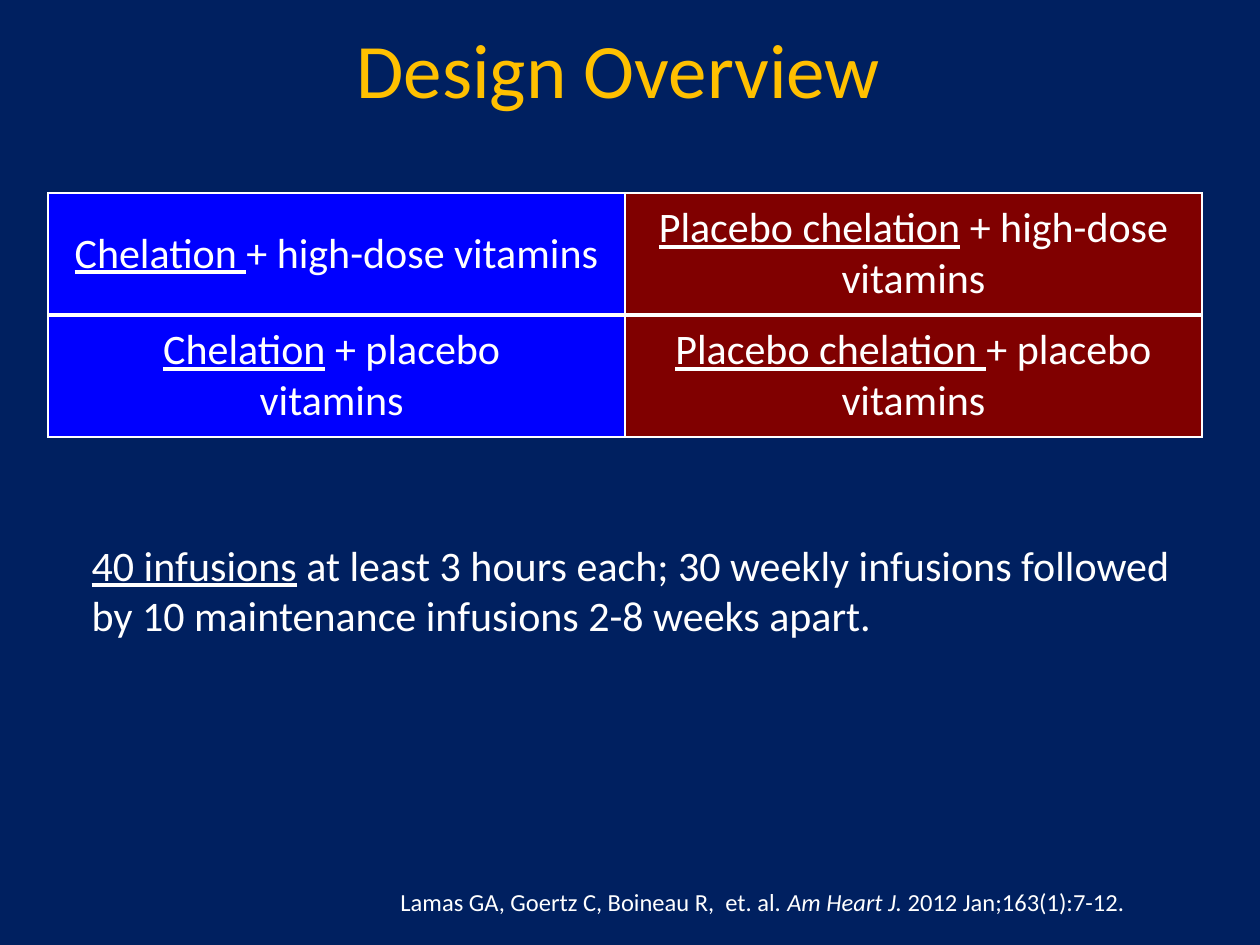
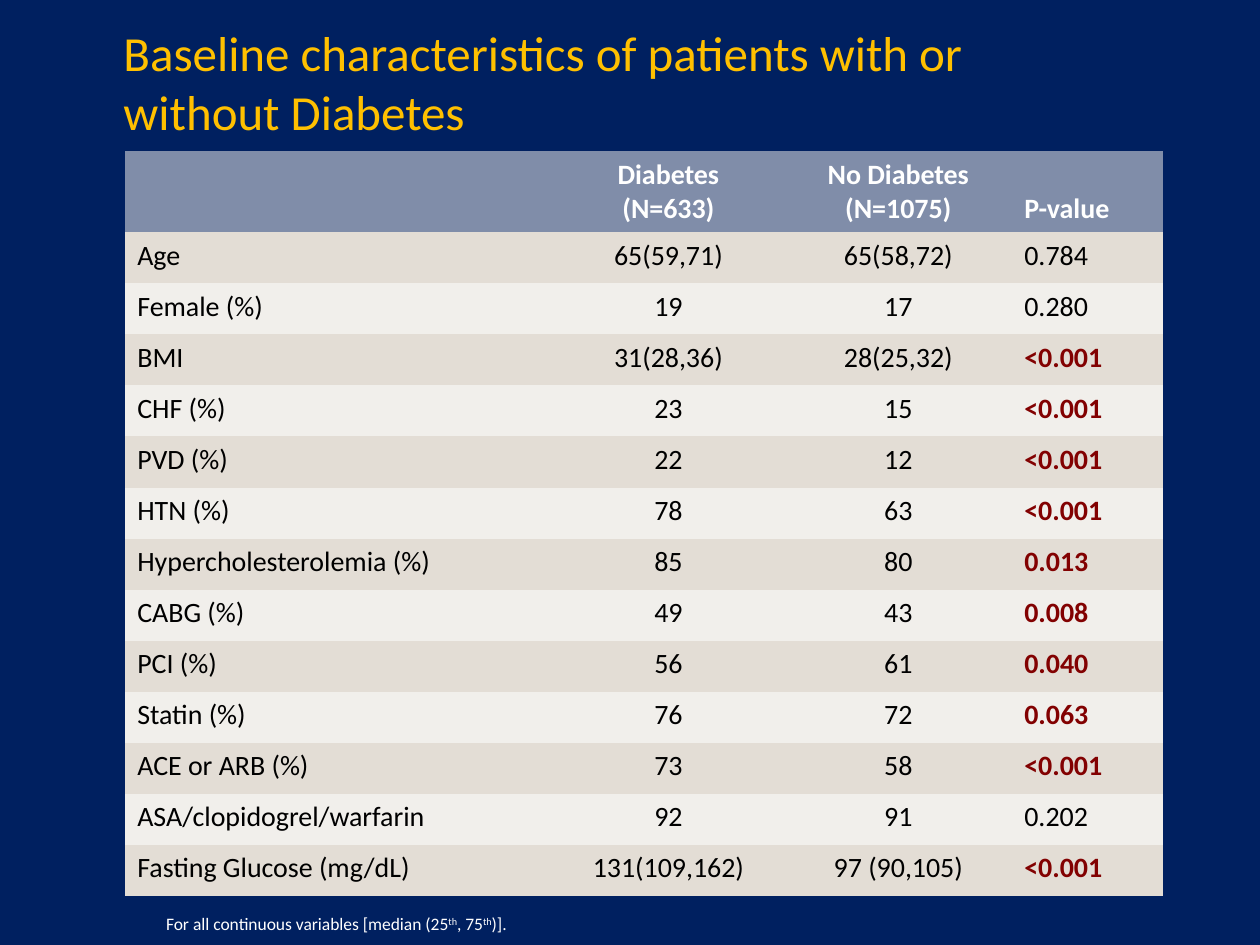
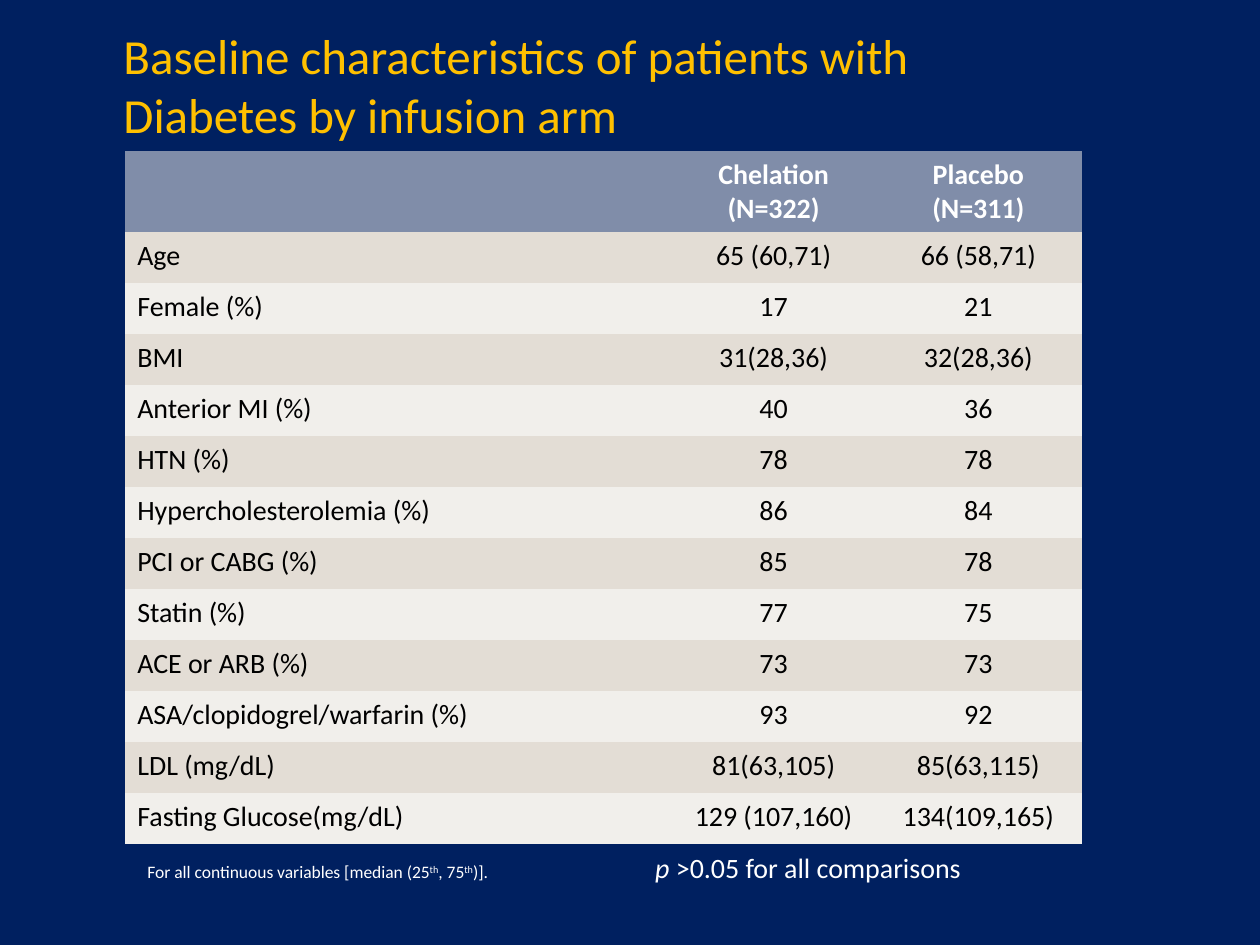
from pptx import Presentation
from pptx.dml.color import RGBColor
from pptx.enum.text import MSO_ANCHOR as Anchor, MSO_AUTO_SIZE as AutoSize, PP_ALIGN as Align
from pptx.oxml.ns import qn
from pptx.util import Inches, Pt
from lxml.etree import SubElement

COLOURS = {
    "navy": "002060", "gold": "FFC000", "white": "FFFFFF", "black": "000000",
    "chelation": "0000FF", "placebo": "800000", "header": "808DA9",
    "band_dark": "E3DDD5", "band_light": "F1EFEB", "significant": "820101",
}
FONT = "Calibri"
PLAIN_TABLE = "{2D5ABB26-0587-4C30-8999-92F81FD0307C}"
HEADER_HEIGHT = 0.64
UNDERLINED = {"underline": True}
ITALIC = {"italic": True}
SUPERSCRIPT = {"superscript": True}
QUARTILES = ["For all continuous variables [median (25", ("th", SUPERSCRIPT),
             ", 75", ("th", SUPERSCRIPT), ")]."]


def rgb(name):
    return RGBColor.from_string(COLOURS[name])


class Deck:
    """Holds the shared style and the slide being built."""

    def __init__(self):
        self.prs = Presentation()
        self.prs.slide_width, self.prs.slide_height = Inches(10), Inches(7.5)
        backdrop = self.prs.slide_master.background.fill
        backdrop.solid()
        backdrop.fore_color.rgb = rgb("navy")
        self.slide = None

    def fill_text(self, frame, paragraphs, size, colour="white", align=Align.LEFT, **style):
        """Fill a frame with paragraphs; each is a string or a list of runs."""
        for index, runs in enumerate(paragraphs):
            para = frame.add_paragraph() if index else frame.paragraphs[0]
            para.alignment = align
            for item in [runs] if isinstance(runs, str) else runs:
                words, extra = (item, {}) if isinstance(item, str) else item
                look = {"name": FONT, "size": Pt(size), **style, **extra}
                run = para.add_run()
                run.text = words
                if look.pop("superscript", False):
                    run._r.get_or_add_rPr().set("baseline", "30000")
                for key, value in look.items():
                    setattr(run.font, key, value)
                run.font.color.rgb = rgb(colour)

    def new_slide(self, title, box, size=28, align=Align.LEFT, anchor=Anchor.TOP):
        self.slide = self.prs.slides.add_slide(self.prs.slide_layouts[5])
        heading = self.slide.shapes.title
        heading.left, heading.top, heading.width, heading.height = map(Inches, box)
        frame = heading.text_frame
        frame.auto_size, frame.vertical_anchor = AutoSize.NONE, anchor
        self.fill_text(frame, title.split("\n"), size, "gold", align)

    def text(self, box, runs, size, indent=0.1, tab=None):
        frame = self.slide.shapes.add_textbox(*map(Inches, box)).text_frame
        frame.word_wrap, frame.margin_left = True, Inches(indent)
        if tab:
            stops = SubElement(frame.paragraphs[0]._p.get_or_add_pPr(), qn("a:tabLst"))
            SubElement(stops, qn("a:tab"), pos=str(Inches(tab)), algn="l")
        self.fill_text(frame, [runs], size)

    def table(self, left, top, widths, heights):
        grid = self.slide.shapes.add_table(
            len(heights), len(widths), Inches(left), Inches(top),
            Inches(sum(widths)), Inches(sum(heights))).table
        grid.horz_banding = False
        grid._tbl.tblPr.find(qn("a:tableStyleId")).text = PLAIN_TABLE
        for column, width in zip(grid.columns, widths):
            column.width = Inches(width)
        for row, height in zip(grid.rows, heights):
            row.height = Inches(height)
        return grid

    def cell(self, cell, fill, paragraphs, size, anchor=Anchor.TOP, **style):
        cell.fill.solid()
        cell.fill.fore_color.rgb = rgb(fill)
        cell.vertical_anchor = anchor
        self.fill_text(cell.text_frame, paragraphs, size, **style)

    def borders(self, cell, widths):
        """Draw white edges; widths maps L, R, T, B to points."""
        props = cell._tc.get_or_add_tcPr()
        for index, side in enumerate("LRTB"):
            edge = props.makeelement(qn(f"a:ln{side}"), {"w": str(Pt(widths[side]))})
            paint = SubElement(edge, qn("a:solidFill"))
            SubElement(paint, qn("a:srgbClr"), val=COLOURS["white"])
            props.insert(index, edge)

    def arms_table(self, arms):
        """Treatment grid with one colour per infusion arm."""
        grid = self.table(0.38, 1.53, [4.58] * 2, [0.97] * 2)
        for r, row in enumerate(arms):
            for c, (fill, paragraphs) in enumerate(zip(("chelation", "placebo"), row)):
                cell = grid.cell(r, c)
                self.cell(cell, fill, paragraphs, 24, Anchor.MIDDLE, align=Align.CENTER)
                middle = "T" if r else "B"
                self.borders(cell, {**dict.fromkeys("LRTB", 1), middle: 3})

    def baseline_table(self, widths, height, headings, rows):
        """Banded table: labels left, groups centred, optional P-value last."""
        row_height = (height - HEADER_HEIGHT) / len(rows)
        grid = self.table(0.99, 1.2, widths, [HEADER_HEIGHT] + [row_height] * len(rows))
        for c, heading in enumerate(headings):
            align = Align.CENTER if c in (1, 2) else Align.LEFT
            lines = heading.split("\n") if heading else []
            self.cell(grid.cell(0, c), "header", lines, 16, Anchor.BOTTOM,
                      align=align, bold=True)
            for r, row in enumerate(rows, 1):
                low_p = c == 3 and float(row[c].lstrip("<")) < 0.1
                self.cell(grid.cell(r, c), "band_dark" if r % 2 else "band_light",
                          [row[c]], 16, align=align, bold=low_p,
                          colour="significant" if low_p else "black")


DIABETES_ROWS = [
    ("Age", "65(59,71)", "65(58,72)", "0.784"),
    ("Female (%)", "19", "17", "0.280"),
    ("BMI", "31(28,36)", "28(25,32)", "<0.001"),
    ("CHF (%)", "23", "15", "<0.001"),
    ("PVD (%)", "22", "12", "<0.001"),
    ("HTN (%)", "78", "63", "<0.001"),
    ("Hypercholesterolemia (%)", "85", "80", "0.013"),
    ("CABG (%)", "49", "43", "0.008"),
    ("PCI (%)", "56", "61", "0.040"),
    ("Statin (%)", "76", "72", "0.063"),
    ("ACE or ARB (%)", "73", "58", "<0.001"),
    ("ASA/clopidogrel/warfarin", "92", "91", "0.202"),
    ("Fasting Glucose (mg/dL)", "131(109,162)", "97 (90,105)", "<0.001"),
]
INFUSION_ROWS = [
    ("Age", "65 (60,71)", "66 (58,71)"),
    ("Female (%)", "17", "21"),
    ("BMI", "31(28,36)", "32(28,36)"),
    ("Anterior MI (%)", "40", "36"),
    ("HTN (%)", "78", "78"),
    ("Hypercholesterolemia (%)", "86", "84"),
    ("PCI or CABG (%)", "85", "78"),
    ("Statin (%)", "77", "75"),
    ("ACE or ARB (%)", "73", "73"),
    ("ASA/clopidogrel/warfarin (%)", "93", "92"),
    ("LDL (mg/dL)", "81(63,105)", "85(63,115)"),
    ("Fasting Glucose(mg/dL)", "129 (107,160)", "134(109,165)"),
]


def main():
    deck = Deck()

    # Trial design
    deck.new_slide("Design Overview", (0.66, 0.19, 8.5, 0.7), 44, Align.CENTER, Anchor.MIDDLE)
    deck.arms_table([
        ([[("Chelation ", UNDERLINED), "+ high-dose vitamins"]],
         [[("Placebo chelation", UNDERLINED), " + high-dose vitamins"]]),
        ([[("Chelation", UNDERLINED), " + placebo "], "vitamins "],
         [[("Placebo chelation ", UNDERLINED), "+ placebo vitamins"]]),
    ])
    deck.text((0.63, 4.23, 8.76, 0.91), [
        ("40 infusions", UNDERLINED),
        " at least 3 hours each; 30 weekly infusions followed by 10 maintenance"
        " infusions 2-8 weeks apart."], 24)
    deck.text((3.08, 6.99, 6.86, 0.34), [
        "Lamas GA, Goertz C, Boineau R,  et. al. ", ("Am Heart J. ", ITALIC),
        "2012 Jan;163(1):7-12."], 14)

    # Baseline by diabetes status
    deck.new_slide("Baseline characteristics of patients with or without Diabetes",
                   (0.88, 0.13, 6.9, 1.04))
    deck.baseline_table([3.39, 1.85, 1.8, 1.2], 5.91,
                        ["", "Diabetes\n(N=633)", "No Diabetes\n(N=1075)", "P-value"],
                        DIABETES_ROWS)
    deck.text((1.22, 7.2, 7.2, 0.27), QUARTILES, 10)

    # Baseline by infusion arm
    deck.new_slide("Baseline characteristics of patients with\nDiabetes by infusion arm",
                   (0.88, 0.15, 8.68, 1.04))
    deck.baseline_table([4.35, 1.6, 1.65], 5.5,
                        ["", "Chelation\n(N=322)", "Placebo\n(N=311)"], INFUSION_ROWS)
    large = {"size": Pt(16)}
    deck.text((0.99, 6.7, 7.61, 0.54), QUARTILES + [
        ("\t", large), ("p ", {**large, **ITALIC}), (">0.05 for all comparisons", large)],
        10, indent=0.18, tab=4.03)

    deck.prs.save("out.pptx")


if __name__ == "__main__":
    main()
